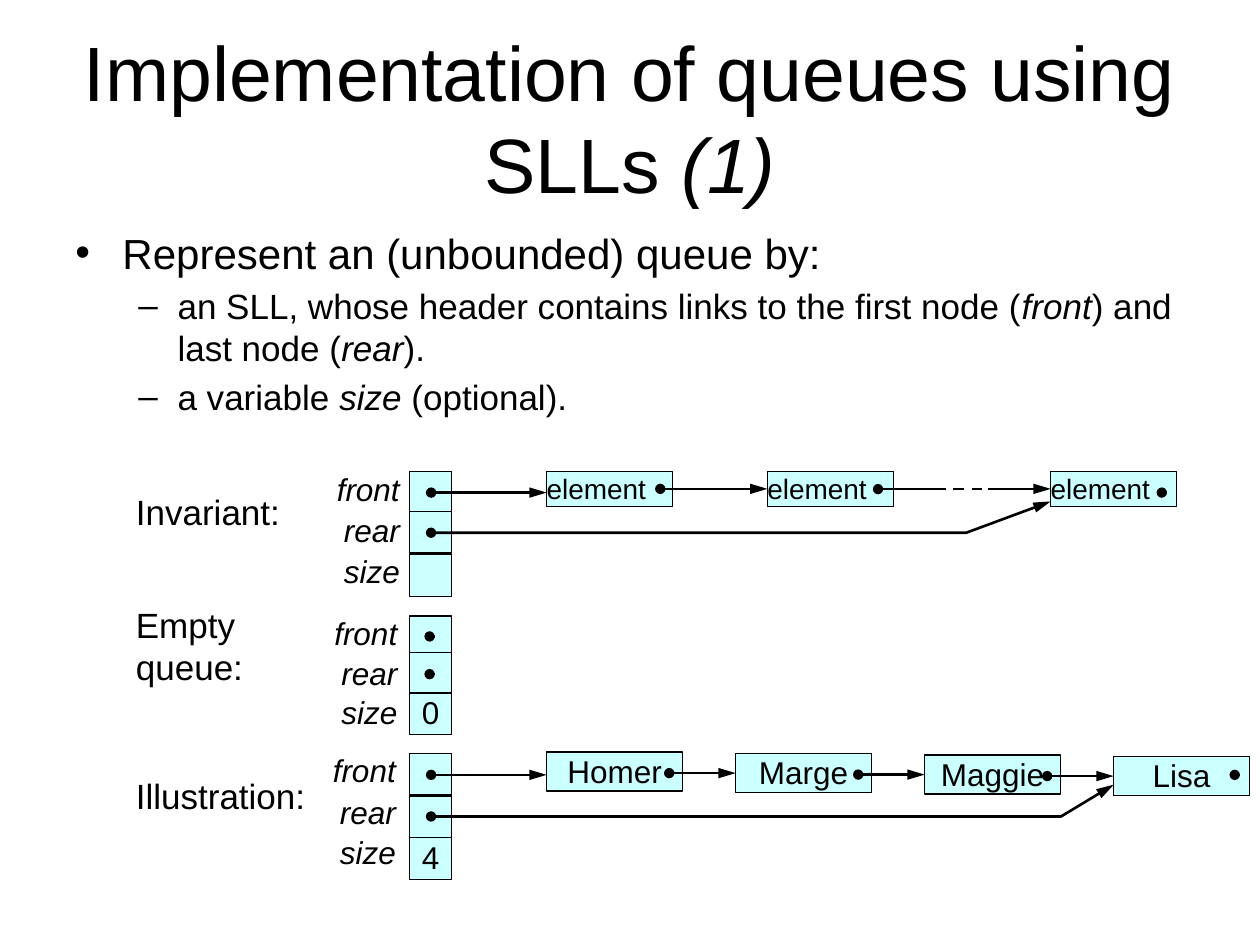
import pptx
import pptx.util
import pptx.dml.color
import pptx.enum.dml
import pptx.enum.shapes
import pptx.enum.text
import pptx.oxml.ns
import lxml.etree
from dataclasses import dataclass

Cm = pptx.util.Cm
Pt = pptx.util.Pt
RECTANGLE = pptx.enum.shapes.MSO_SHAPE.RECTANGLE
STRAIGHT = pptx.enum.shapes.MSO_CONNECTOR.STRAIGHT
ALIGN = pptx.enum.text.PP_ALIGN
ANCHOR = pptx.enum.text.MSO_ANCHOR
qn = pptx.oxml.ns.qn


@dataclass
class Theme:
    font: str = "Arial"
    ink: pptx.dml.color.RGBColor = pptx.dml.color.RGBColor(0, 0, 0)
    cell: pptx.dml.color.RGBColor = pptx.dml.color.RGBColor(0xCC, 0xFF, 0xFF)
    title: int = 44
    body: int = 24
    sub: int = 20
    label: int = 18
    element: int = 16
    outline: float = 0.75
    link: float = 1.5


theme = Theme()


def write_text(shape, text, size, align=ALIGN.LEFT, anchor=ANCHOR.TOP, inset=(0, 0), before=0):
    frame = shape.text_frame
    frame.word_wrap = True
    frame.vertical_anchor = anchor
    frame.margin_left = frame.margin_right = Cm(inset[0])
    frame.margin_top = frame.margin_bottom = Cm(inset[1])
    paragraph = frame.add_paragraph() if frame.text else frame.paragraphs[0]
    paragraph.alignment = align
    paragraph.space_before = Pt(before)
    for index, piece in enumerate(text.split("*")):
        if piece:
            run = paragraph.add_run()
            run.text = piece
            run.font.name = theme.font
            run.font.size = Pt(size)
            run.font.italic = index % 2 == 1
            run.font.color.rgb = theme.ink
    return paragraph


def style_link(shape, dot=True, arrow=True, dashed=False):
    shape.line.color.rgb = theme.ink
    shape.line.width = Pt(theme.link)
    if dashed:
        shape.line.dash_style = pptx.enum.dml.MSO_LINE.DASH
    properties = shape._element.spPr
    outline = properties.find(qn("a:ln"))
    if dot:
        lxml.etree.SubElement(outline, qn("a:headEnd"), type="oval")
    if arrow:
        lxml.etree.SubElement(outline, qn("a:tailEnd"), type="triangle", w="med", len="lg")
    lxml.etree.SubElement(properties, qn("a:effectLst"))


presentation = pptx.Presentation()
presentation.slide_width = Cm(25.4)
presentation.slide_height = Cm(19.05)
slide = presentation.slides.add_slide(presentation.slide_layouts[5])
shapes = slide.shapes

title = shapes.title
title.left, title.top, title.width, title.height = Cm(1.27), Cm(0.76), Cm(22.86), Cm(3.18)
write_text(title, "Implementation of queues using SLLs *(1)*", theme.title,
           align=ALIGN.CENTER, anchor=ANCHOR.MIDDLE, inset=(0.25, 0.13))

body = shapes.add_textbox(Cm(1.27), Cm(4.45), Cm(22.86), Cm(12.57))
bullets = [
    ("Represent an (unbounded) queue by:", 0, theme.body, "•", 0.95, 0.95),
    ("an SLL, whose header contains links to the first node (*front*) and last node (*rear*).",
     1, theme.sub, "–", 2.06, 0.79),
    ("a variable *size* (optional).", 1, theme.sub, "–", 2.06, 0.79),
]
for text, level, size, bullet, margin, hanging in bullets:
    paragraph = write_text(body, text, size, inset=(0.25, 0.13), before=size * 0.2)
    paragraph.level = level
    properties = paragraph._p.get_or_add_pPr()
    properties.set("marL", str(Cm(margin)))
    properties.set("indent", str(-Cm(hanging)))
    lxml.etree.SubElement(properties, qn("a:buFont"), typeface=theme.font)
    lxml.etree.SubElement(properties, qn("a:buChar"), char=bullet)

cell_left, cell_side, dot_x = 8.26, 0.84, 8.69
headers = [
    ("Invariant:", 9.88, 0.84, 6.05, (9.5, 10.31, 11.18), (9.47, 10.31, 11.13), ""),
    ("Empty queue:", 12.17, 1.7, 6.0, (12.42, 13.16, 13.97), (12.37, 13.18, 13.97), "0"),
    ("Illustration:", 15.62, 0.84, 5.97, (15.19, 16.05, 16.89), (15.14, 15.98, 16.79), "4"),
]
for caption, caption_top, caption_height, label_left, cell_tops, label_tops, count in headers:
    box = shapes.add_textbox(Cm(2.74), Cm(caption_top), Cm(3.45), Cm(caption_height))
    write_text(box, caption, theme.sub)
    for field, cell_top, label_top in zip(("front", "rear", "size"), cell_tops, label_tops):
        cell = shapes.add_shape(RECTANGLE, Cm(cell_left), Cm(cell_top), Cm(cell_side), Cm(cell_side))
        cell.shadow.inherit = False
        cell.fill.solid()
        cell.fill.fore_color.rgb = theme.cell
        cell.line.color.rgb = theme.ink
        cell.line.width = Pt(theme.outline)
        if field == "size" and count:
            write_text(cell, count, theme.label, align=ALIGN.CENTER)
        label = shapes.add_textbox(Cm(label_left), Cm(label_top), Cm(2.01), Cm(0.76))
        write_text(label, f"*{field}*", theme.label, align=ALIGN.RIGHT)

elements = [("element", left, 9.5, 2.54, 0.71, theme.element, ALIGN.LEFT)
            for left in (11.02, 15.47, 21.18)]
people = [(name, 11.02 + 3.81 * index, 15.16 + 0.03 * index, 2.74, 0.79, theme.label, ALIGN.CENTER)
          for index, name in enumerate(("Homer", "Marge", "Maggie", "Lisa"))]
nodes = []
for text, left, top, width, height, size, align in elements + people:
    node = shapes.add_shape(RECTANGLE, Cm(left), Cm(top), Cm(width), Cm(height))
    node.shadow.inherit = False
    node.fill.solid()
    node.fill.fore_color.rgb = theme.cell
    node.line.color.rgb = theme.ink
    node.line.width = Pt(theme.outline)
    write_text(node, text, size, align=align)
    nodes.append(node)

node_links = [(13.31, 1, {}), (19.91, 2, {"dot": False}),
              (13.49, 4, {}), (17.3, 5, {}), (21.11, 6, {})]
for start, target, ends in node_links:
    node = nodes[target]
    middle = node.top + node.height // 2
    link = shapes.add_connector(STRAIGHT, Cm(start), middle, node.left, middle)
    link.end_connect(node, 1)
    style_link(link, **ends)

loose_links = [
    (dot_x, 11.02, 9.93, {}),
    (dot_x, 11.02, 15.62, {}),
    (17.7, 18.85, 9.86, {"arrow": False}),
    (18.85, 19.91, 9.86, {"dot": False, "arrow": False, "dashed": True}),
]
null_links = [(x, x + 0.1, y, {"arrow": False})
              for x, y in ((23.42, 9.93), (8.66, 12.83), (8.66, 13.59), (24.89, 15.62))]
for start, end, y, ends in loose_links + null_links:
    link = shapes.add_connector(STRAIGHT, Cm(start), Cm(y), Cm(end), Cm(y))
    style_link(link, **ends)

for y, bend, tip_x, tip_y in ((10.74, 19.48, 21.18, 10.11), (16.46, 21.39, 22.45, 15.82)):
    builder = shapes.build_freeform(Cm(dot_x), Cm(y), scale=1.0)
    builder.add_line_segments([(Cm(bend), Cm(y)), (Cm(tip_x), Cm(tip_y))], close=False)
    rear_link = builder.convert_to_shape()
    rear_link.fill.background()
    style_link(rear_link)

presentation.save("out.pptx")
